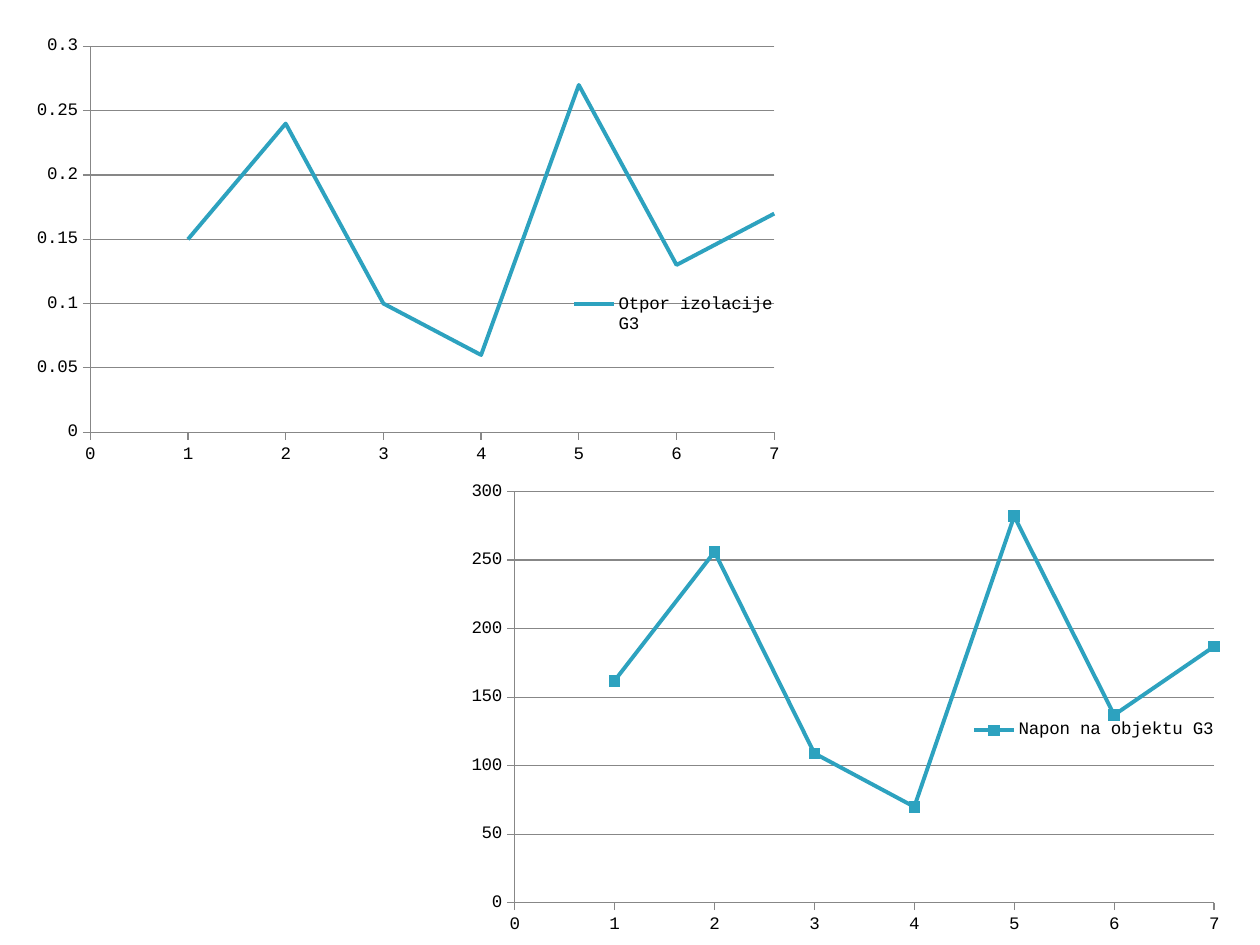
from lxml import etree
from pptx import Presentation
from pptx import util as u
from pptx.chart.data import XyChartData
from pptx.dml.color import RGBColor
from pptx.enum import chart as ch
from pptx.oxml.ns import qn

# Content: one measured quantity per chart; layouts are fractions (x, y, w, h)
COLORS = {"curve": "2DA2BF", "grid": "878787", "text": "000000"}
FONT = "Courier New"
POINTS = range(1, 8)
CHARTS = [
    {"name": "Otpor izolacije G3",
     "values": [0.15, 0.24, 0.1, 0.06, 0.27, 0.13, 0.17],
     "top": 0.3, "step": 0.05, "markers": False,
     "box": (0.41, 0.58, 15.67, 8.94),
     "plot": (0.09, 0.04, 0.88, 0.87), "legend": (0.7, 0.58, 0.28, 0.13)},
    {"name": "Napon na objektu G3",
     "values": [162, 256, 109, 70, 282, 137, 187],
     "top": 300, "step": 50, "markers": True,
     "box": (9.12, 9.53, 15.67, 9.53),
     "plot": (0.08, 0.04, 0.9, 0.87), "legend": (0.66, 0.51, 0.33, 0.07)},
]


def rgb(key):
    return RGBColor.from_string(COLORS[key])


def place(parent, fractions, index, inner=False):
    """Give a plot area or legend a manual layout."""
    for old in parent.findall(qn("c:layout")):
        parent.remove(old)
    layout = etree.Element(qn("c:layout"))
    manual = etree.SubElement(layout, qn("c:manualLayout"))
    settings = [("layoutTarget", "inner")] if inner else []
    settings += [("xMode", "edge"), ("yMode", "edge")]
    settings += zip("xywh", fractions)
    for tag, value in settings:
        etree.SubElement(manual, qn("c:" + tag)).set("val", str(value))
    parent.insert(index, layout)


def style_axis(axis, top, step, grid):
    axis.minimum_scale, axis.maximum_scale, axis.major_unit = 0, top, step
    axis.major_tick_mark = ch.XL_TICK_MARK.OUTSIDE
    axis.minor_tick_mark = ch.XL_TICK_MARK.NONE
    axis.has_major_gridlines = grid
    axis.tick_labels.number_format = "General"
    axis.tick_labels.number_format_is_linked = False
    lines = [axis.format.line]
    if grid:
        lines.append(axis.major_gridlines.format.line)
    for line in lines:
        line.color.rgb = rgb("grid")
        line.width = u.Pt(0.75)


def add_curve(slide, item):
    data = XyChartData()
    measured = data.add_series(item["name"])
    for x, y in zip(POINTS, item["values"]):
        measured.add_data_point(x, y)
    kind = (ch.XL_CHART_TYPE.XY_SCATTER_SMOOTH if item["markers"]
            else ch.XL_CHART_TYPE.XY_SCATTER_SMOOTH_NO_MARKERS)
    chart = slide.shapes.add_chart(kind, *map(u.Cm, item["box"]), data).chart
    chart.has_title = False
    chart.font.name, chart.font.size = FONT, u.Pt(10)
    chart.font.color.rgb = rgb("text")

    # Axes
    style_axis(chart.category_axis, max(POINTS), 1, False)
    style_axis(chart.value_axis, item["top"], item["step"], True)

    # Curve
    plot = chart.plots[0]
    plot.vary_by_categories = False
    curve = plot.series[0]
    curve.format.line.color.rgb = rgb("curve")
    curve.format.line.width = u.Pt(2.25)
    if item["markers"]:
        curve.marker.style = ch.XL_MARKER_STYLE.SQUARE
        curve.marker.size = 6
        curve.marker.format.fill.solid()
        curve.marker.format.fill.fore_color.rgb = rgb("curve")
        curve.marker.format.line.color.rgb = rgb("curve")

    # Legend over the plot
    chart.has_legend = True
    chart.legend.position = ch.XL_LEGEND_POSITION.RIGHT
    chart.legend.include_in_layout = True
    area = chart.element.find(".//" + qn("c:plotArea"))
    place(area, item["plot"], 0, inner=True)
    place(chart.element.find(".//" + qn("c:legend")), item["legend"], 1)


def main():
    deck = Presentation()
    deck.slide_width, deck.slide_height = u.Cm(25.4), u.Cm(19.05)
    slide = deck.slides.add_slide(deck.slide_layouts[6])
    for item in CHARTS:
        add_curve(slide, item)
    deck.save("out.pptx")


if __name__ == "__main__":
    main()
